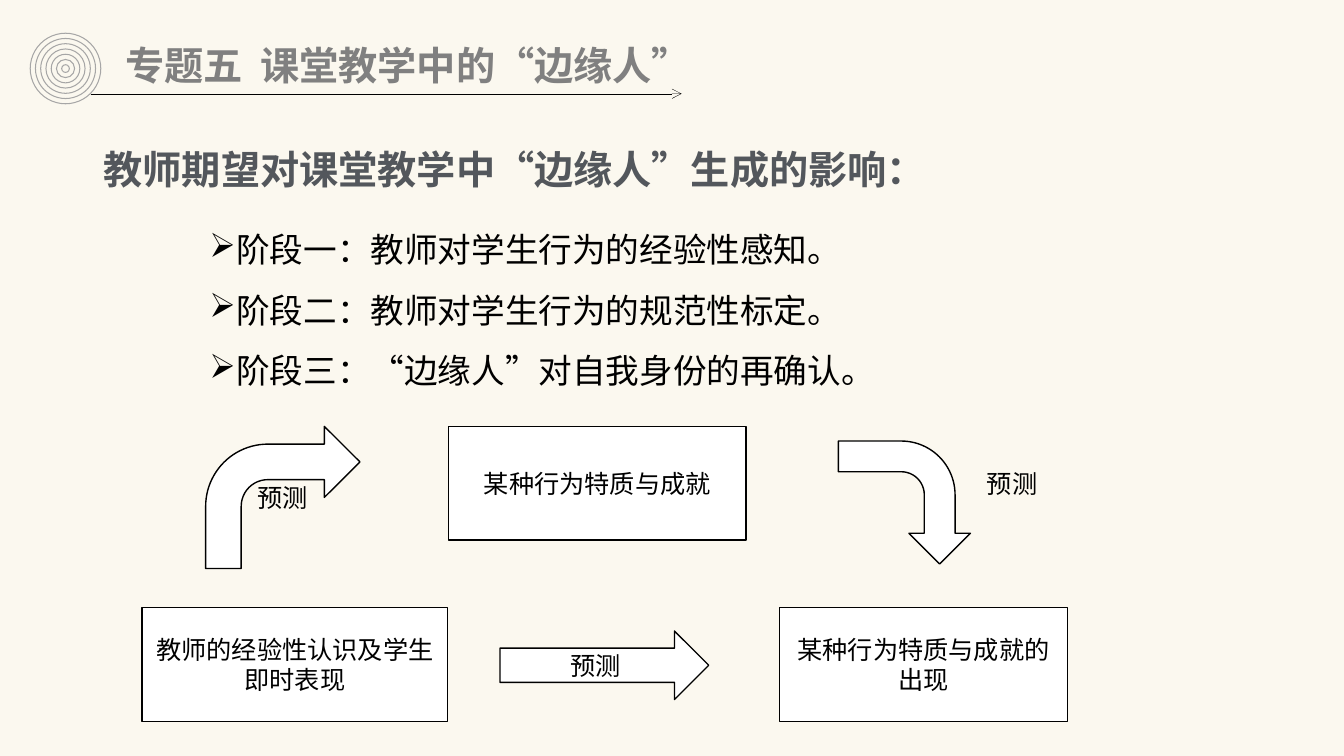
from lxml import etree
from pptx import Presentation, util as u
from pptx.dml.color import RGBColor
from pptx.enum import shapes, text
from pptx.oxml.ns import qn

HEADER = "专题五  课堂教学中的“边缘人”"
QUESTION = "教师期望对课堂教学中“边缘人”生成的影响："
STAGES = [
    "阶段一：教师对学生行为的经验性感知。",
    "阶段二：教师对学生行为的规范性标定。",
    "阶段三：“边缘人”对自我身份的再确认。",
]
KIND = shapes.MSO_SHAPE
CYCLE = [
    (KIND.RECTANGLE, (1.41, 6.03, 3.03, 1.13), 0, "教师的经验性认识及学生即时表现"),
    (KIND.RIGHT_ARROW, (4.96, 6.26, 2.07, 0.68), 0, "预测"),
    (KIND.RECTANGLE, (7.73, 6.03, 2.86, 1.13), 0, "某种行为特质与成就的出现"),
    (KIND.BENT_ARROW, (2.04, 4.23, 1.53, 1.41), 0, "预测"),
    (KIND.RECTANGLE, (4.45, 4.23, 2.95, 1.13), 0, "某种行为特质与成就"),
    (KIND.BENT_ARROW, (8.36, 4.33, 1.22, 1.31), 90, ""),
]
SIDE_LABEL = "预测"
CREAM, WHITE, BLACK, GREY, SLATE, RING = (
    "FBF8EF", "FFFFFF", "000000", "808080", "53575C", "A6A6A6")
LATIN, HAN = "Roboto Condensed", "Noto Sans CJK SC"
RINGS, RING_GAP = 7, 0.052


def color(code):
    return RGBColor.from_string(code)


def inches(box):
    return [u.Inches(length) for length in box]


def style(paragraph, size, code, face=LATIN, bold=False):
    font = paragraph.font
    font.size, font.bold, font.name = u.Pt(size), bold, face
    font.color.rgb = color(code)
    latin = paragraph._p.pPr.find(qn("a:defRPr")).find(qn("a:latin"))
    east = etree.Element(qn("a:ea"), typeface=HAN)
    latin.addnext(east)


def add_bullet(paragraph):
    props = paragraph._p.get_or_add_pPr()
    props.set("marL", str(u.Inches(0.38)))
    props.set("indent", str(u.Inches(0.67)))
    etree.SubElement(props, qn("a:buChar"), char="➢")


def add_outline(slide, kind, box, fill, line, width):
    shape = slide.shapes.add_shape(kind, *inches(box))
    shape.shadow.inherit = False
    shape.fill.solid()
    shape.fill.fore_color.rgb = color(fill)
    shape.line.color.rgb = color(line)
    shape.line.width = u.Pt(width)
    return shape


def add_header(slide):
    for ring in range(RINGS):
        inset = ring * RING_GAP
        side = 0.7 - 2 * inset
        add_outline(slide, KIND.OVAL, (0.3 + inset, 0.33 + inset, side, side), CREAM, RING, 0)
    title = slide.shapes.title
    title.left, title.top, title.width, title.height = inches((1.14, 0.36, 6.61, 0.57))
    frame = title.text_frame
    frame.text = HEADER
    frame.auto_size = text.MSO_AUTO_SIZE.NONE
    frame.vertical_anchor = text.MSO_ANCHOR.TOP
    frame.paragraphs[0].alignment = text.PP_ALIGN.LEFT
    style(frame.paragraphs[0], 28, GREY, bold=True)

    rule = slide.shapes.add_connector(
        shapes.MSO_CONNECTOR.STRAIGHT, *inches((0.9, 0.93, 6.76, 0.93)))
    rule.line.color.rgb = color(BLACK)
    rule.line.width = u.Pt(0.25)
    etree.SubElement(rule.line._get_or_add_ln(), qn("a:tailEnd"), type="arrow")
    etree.SubElement(rule._element.spPr, qn("a:effectLst"))


def add_stages(slide):
    frame = slide.shapes.add_textbox(*inches((0.93, 1.25, 12.2, 2.72))).text_frame
    frame.word_wrap = True
    question = frame.paragraphs[0]
    question.text = QUESTION
    question.alignment = text.PP_ALIGN.JUSTIFY
    question.line_spacing, question.space_after = 1.3, u.Pt(12)
    style(question, 28, SLATE, HAN, True)
    for wording in STAGES:
        stage = frame.add_paragraph()
        stage.text = wording
        stage.alignment = text.PP_ALIGN.JUSTIFY
        stage.line_spacing = 1.5
        add_bullet(stage)
        style(stage, 24, BLACK, "Calibri")


def add_cycle(slide):
    for kind, box, turn, wording in CYCLE:
        step = add_outline(slide, kind, box, WHITE, BLACK, 1)
        step.rotation = turn
        if wording:
            frame = step.text_frame
            frame.text = wording
            frame.vertical_anchor = text.MSO_ANCHOR.MIDDLE
            frame.paragraphs[0].alignment = text.PP_ALIGN.CENTER
            style(frame.paragraphs[0], 18, BLACK)
    label = slide.shapes.add_textbox(*inches((9.69, 4.6, 1.43, 0.4))).text_frame
    label.word_wrap = True
    label.text = SIDE_LABEL
    style(label.paragraphs[0], 18, BLACK, HAN)


def main():
    deck = Presentation()
    deck.slide_width, deck.slide_height = inches((13.33, 7.5))
    slide = deck.slides.add_slide(deck.slide_layouts[5])
    slide.background.fill.solid()
    slide.background.fill.fore_color.rgb = color(CREAM)
    add_header(slide)
    add_stages(slide)
    add_cycle(slide)
    deck.save("out.pptx")


if __name__ == "__main__":
    main()
